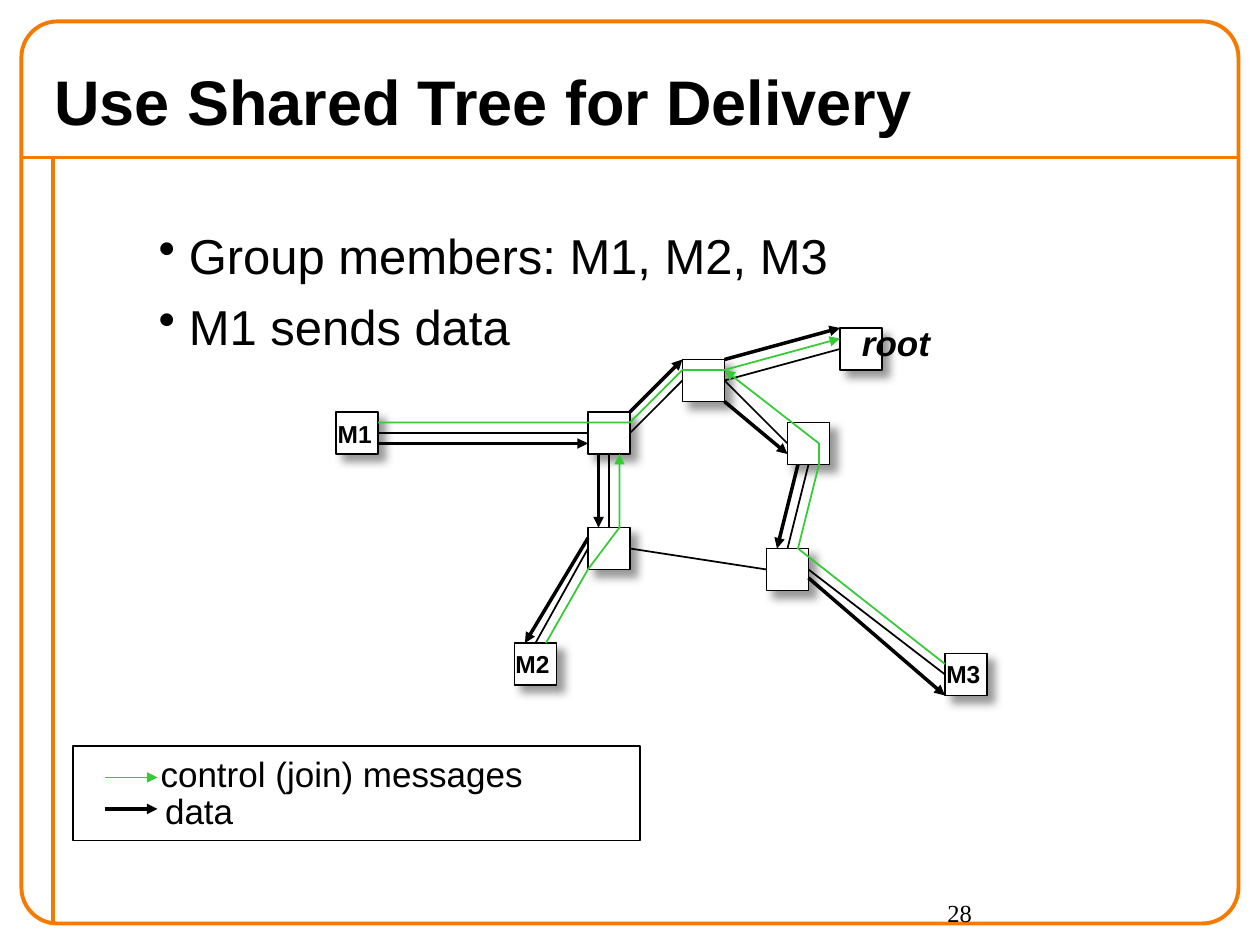
import pptx
import pptx.dml.color
import pptx.enum.shapes
import pptx.enum.text
import pptx.oxml
import pptx.oxml.ns
import pptx.util

RGBColor = pptx.dml.color.RGBColor
Inches, Pt = pptx.util.Inches, pptx.util.Pt
MSO_SHAPE = pptx.enum.shapes.MSO_SHAPE
ALIGN = pptx.enum.text.PP_ALIGN
ANCHOR = pptx.enum.text.MSO_ANCHOR
qn, NSDECLS = pptx.oxml.ns.qn, pptx.oxml.ns.nsdecls("a")

BLACK = RGBColor(0, 0, 0)
WHITE = RGBColor(0xFF, 0xFF, 0xFF)
ORANGE = RGBColor(0xF4, 0x7A, 0x00)
GREEN = RGBColor(0x33, 0xCC, 0x33)

CELL = Inches(1) / 12    # the network lies on a grid of 1/12 inch
GRID_TOP = Inches(0.02)
ROUTER_CELLS = 4
TOP, LEFT, BOTTOM, RIGHT = range(4)

# Upper left corner of each router: (column, row)
ROUTERS = {
    "west": (56, 39), "southwest": (56, 50), "southeast": (73, 52),
    "east": (75, 40), "north": (65, 34), "M2": (49, 61),
    "M3": (90, 62), "M1": (32, 39), "root": (80, 31),
}
LINKS = [
    ("north", RIGHT, "root", LEFT), ("north", RIGHT, "east", LEFT),
    ("north", LEFT, "west", RIGHT), ("west", BOTTOM, "southwest", TOP),
    ("southwest", RIGHT, "southeast", LEFT), ("southeast", TOP, "east", BOTTOM),
    ("M1", RIGHT, "west", LEFT), ("M2", TOP, "southwest", LEFT),
    ("M3", LEFT, "southeast", RIGHT),
]
JOIN_PATHS = [
    [(36, 40), (60, 40), (65, 35), (69, 35), (80, 32)],
    [(52, 61), (56, 54), (59, 50), (59, 43)],
    [(90, 63), (76, 52), (78, 44), (78, 42), (69, 35)],
]
DATA_HOPS = [
    ((36, 42), (56, 42)), ((57, 43), (57, 50)), ((56, 51), (50, 61)),
    ((60, 39), (65, 34)), ((69, 38), (75, 43)), ((76, 44), (74, 52)),
    ((77, 54.8), (90, 66)), ((69, 34), (80, 31)),
]


def grid(column, row):
    return round(column * CELL), round(GRID_TOP + row * CELL)


def style_line(shape, color, width, arrow=False):
    shape.line.color.rgb = color
    shape.line.width = Pt(width)
    if arrow:
        shape._element.spPr.find(qn("a:ln")).append(
            pptx.oxml.parse_xml(f'<a:tailEnd {NSDECLS} type="triangle"/>'))


def add_line(slide, start, end, color=BLACK, width=1, arrow=False):
    line = slide.shapes.add_connector(
        pptx.enum.shapes.MSO_CONNECTOR.STRAIGHT, *start, *end)
    style_line(line, color, width, arrow)
    line._element.spPr.append(pptx.oxml.parse_xml(f"<a:effectLst {NSDECLS}/>"))
    return line


def add_box(slide, kind, left, top, width, height, color=BLACK, weight=1, fill=None):
    box = slide.shapes.add_shape(kind, left, top, width, height)
    box.shadow.inherit = False
    if fill is None:
        box.fill.background()
    else:
        box.fill.solid()
        box.fill.fore_color.rgb = fill
    style_line(box, color, weight)
    return box


def write(paragraph, text, size, bold=False, italic=False, font="Arial"):
    run = paragraph.add_run()
    run.text = text
    run.font.name, run.font.size = font, Pt(size)
    run.font.bold, run.font.italic = bold, italic
    run.font.color.rgb = BLACK


def add_label(slide, text, left, top, width, height, size, **style):
    """A one-line text that ends at the right side of its box."""
    label = slide.shapes.add_textbox(
        Inches(left), Inches(top), Inches(width), Inches(height))
    label.text_frame.word_wrap = False
    paragraph = label.text_frame.paragraphs[0]
    paragraph.alignment = ALIGN.RIGHT
    write(paragraph, text, size, **style)


def add_frame(slide, slide_width, slide_height):
    margin, rule_y, rule_x = Inches(0.17), Inches(1.25), Inches(0.42)
    right, bottom = slide_width - margin, slide_height - margin
    add_line(slide, (margin, rule_y), (right, rule_y), ORANGE, 2.25)
    add_line(slide, (rule_x, rule_y), (rule_x, bottom), ORANGE, 2.25)
    border = add_box(slide, MSO_SHAPE.ROUNDED_RECTANGLE, margin, margin,
                     right - margin, bottom - margin, ORANGE, 2.25)
    border.adjustments[0] = 0.04


def add_page_number(slide, number):
    box = slide.shapes.add_textbox(
        Inches(7.42), Inches(7.08), Inches(2.08), Inches(0.5))
    box.text_frame.word_wrap = True
    write(box.text_frame.paragraphs[0], number, 14, font="Times New Roman")


def set_title(slide, text):
    title = slide.shapes.title
    title.left, title.top = Inches(0.33), Inches(0.42)
    title.width, title.height = Inches(9.67), Inches(0.75)
    title.text_frame.vertical_anchor = ANCHOR.MIDDLE
    paragraph = title.text_frame.paragraphs[0]
    paragraph.alignment = ALIGN.LEFT
    write(paragraph, text, 36, bold=True)


def add_bullets(slide, items):
    frame = slide.shapes.add_textbox(
        Inches(1.16), Inches(1.83), Inches(7.25), Inches(0.86)).text_frame
    frame.word_wrap = True
    for index, item in enumerate(items):
        paragraph = frame.add_paragraph() if index else frame.paragraphs[0]
        paragraph.line_spacing = 0.8
        paragraph.space_before = Pt(14 if index else 0)
        properties = paragraph._p.get_or_add_pPr()
        properties.set("marL", str(Inches(0.24)))
        properties.set("indent", str(-Inches(0.24)))
        properties.append(pptx.oxml.parse_xml(f'<a:buChar {NSDECLS} char="•"/>'))
        write(paragraph, item, 28)


def add_router(slide, corner):
    side = round(ROUTER_CELLS * CELL)
    router = add_box(slide, MSO_SHAPE.RECTANGLE, *grid(*corner), side, side, fill=WHITE)
    router._element.spPr.find(qn("a:effectLst")).append(pptx.oxml.parse_xml(
        f'<a:outerShdw {NSDECLS} blurRad="{Pt(5)}" dist="{Pt(5.7)}" dir="2700000" '
        'algn="ctr" rotWithShape="0"><a:srgbClr val="777777">'
        '<a:alpha val="75000"/></a:srgbClr></a:outerShdw>'))
    return router


def add_link(slide, start, start_side, end, end_side):
    link = add_line(slide, (0, 0), (0, 0))
    link.begin_connect(start, start_side)
    link.end_connect(end, end_side)


def add_join_path(slide, points):
    builder = slide.shapes.build_freeform(*points[0], scale=CELL)
    builder.add_line_segments(points[1:], close=False)
    path_shape = builder.convert_to_shape(0, GRID_TOP)
    path_shape.fill.background()
    path_shape.shadow.inherit = False
    style_line(path_shape, GREEN, 1, arrow=True)


def add_legend(slide):
    for y, color, width in ((6.17, GREEN, 1), (6.42, BLACK, 2)):
        add_line(slide, (Inches(0.83), Inches(y)), (Inches(1.25), Inches(y)),
                 color, width, arrow=True)
    add_label(slide, "control (join) messages", 1.15, 5.92, 3.1, 0.43, 20)
    add_label(slide, "data", 1.2, 6.22, 0.75, 0.43, 20)
    add_box(slide, MSO_SHAPE.RECTANGLE,
            Inches(0.58), Inches(5.92), Inches(4.5), Inches(0.75))


def main():
    deck = pptx.Presentation()
    deck.slide_width, deck.slide_height = Inches(10), Inches(7.5)
    slide = deck.slides.add_slide(deck.slide_layouts[5])

    add_frame(slide, deck.slide_width, deck.slide_height)
    add_page_number(slide, "28")
    set_title(slide, "Use Shared Tree for Delivery")
    add_bullets(slide, ["Group members: M1, M2, M3", "M1 sends data"])

    routers = {name: add_router(slide, corner) for name, corner in ROUTERS.items()}
    for start, start_side, end, end_side in LINKS:
        add_link(slide, routers[start], start_side, routers[end], end_side)
    add_label(slide, "root", 6.67, 2.5, 0.81, 0.43, 20, bold=True, italic=True)
    for points in JOIN_PATHS:
        add_join_path(slide, points)
    for member, left, top in (("M1", 2.58, 3.28), ("M2", 3.99, 5.1), ("M3", 7.41, 5.18)):
        add_label(slide, member, left, top, 0.47, 0.33, 14, bold=True)
    for start, end in DATA_HOPS:
        add_line(slide, grid(*start), grid(*end), width=2, arrow=True)
    add_legend(slide)

    deck.save("out.pptx")


if __name__ == "__main__":
    main()
